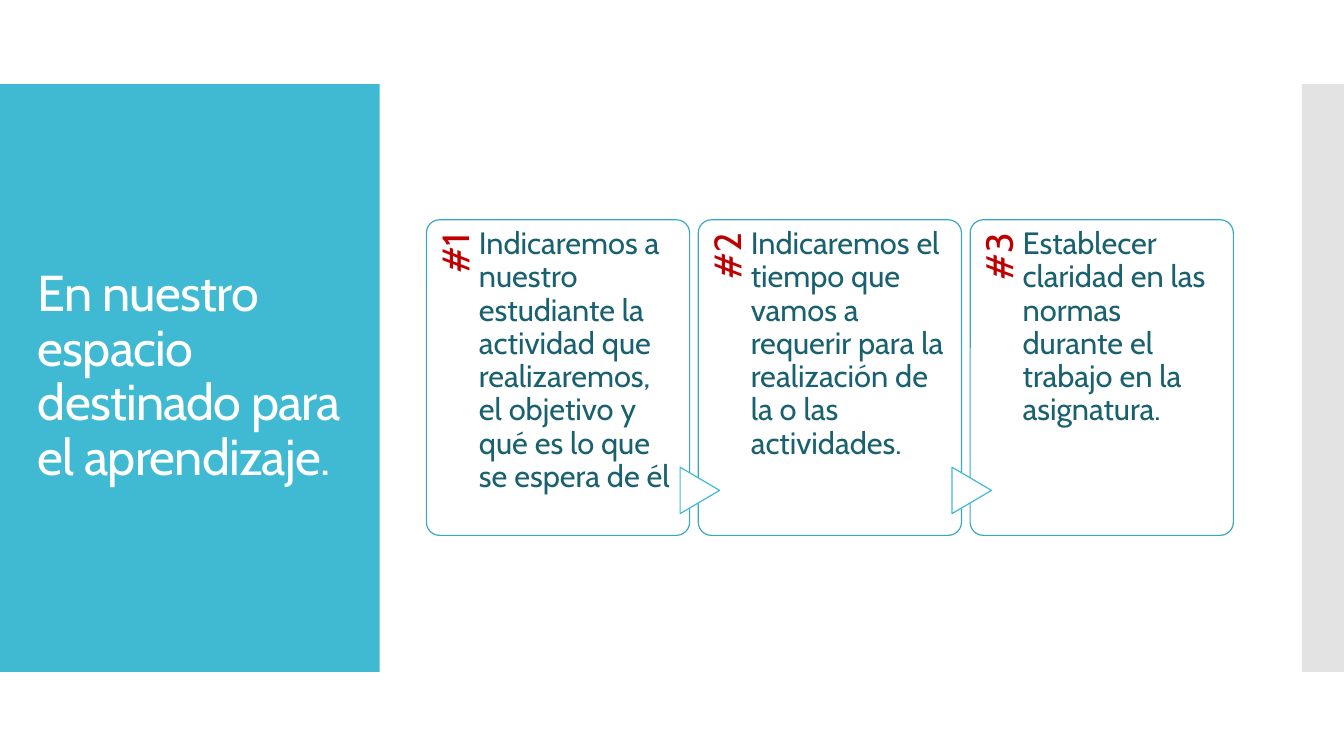
from pptx import Presentation
from pptx.dml.color import RGBColor
from pptx.enum.shapes import MSO_SHAPE
from pptx.enum.text import MSO_ANCHOR, PP_ALIGN
from pptx.oxml.ns import qn
from pptx.util import Pt
from lxml.etree import SubElement


def add_box(kind, left, top, width, height, fill, line=None):
    box = slide.shapes.add_shape(kind, Pt(left), Pt(top), Pt(width), Pt(height))
    box.shadow.inherit = False
    box.fill.solid()
    box.fill.fore_color.rgb = RGBColor.from_string(fill)
    if line:
        box.line.color.rgb = RGBColor.from_string(line)
        box.line.width = Pt(0.85)
    else:
        box.line.fill.background()
    return box


def add_text(text, left, top, width, height, size, color, frame, align=PP_ALIGN.LEFT):
    """Add a wrapped text box; frame holds the text frame's format values."""
    box = slide.shapes.add_textbox(Pt(left), Pt(top), Pt(width), Pt(height))
    for name, value in {"word_wrap": True, **frame}.items():
        setattr(box.text_frame, name, value)
    para = box.text_frame.paragraphs[0]
    para.alignment = align
    para.line_spacing = 0.9
    run = para.add_run()
    run.text = text
    font = {"name": "Cabin", "size": Pt(size)}
    for name, value in font.items():
        setattr(run.font, name, value)
    run.font.color.rgb = RGBColor.from_string(color)
    return box


deck = Presentation()
deck.slide_width, deck.slide_height = Pt(960), Pt(540)
slide = deck.slides.add_slide(deck.slide_layouts[6])

# Side panels and title
add_box(MSO_SHAPE.RECTANGLE, 0, 60, 271.2, 420, "40BAD2")
strip = add_box(MSO_SHAPE.RECTANGLE, 930, 60, 30, 420, "C8C8C8")
tint = strip.fill._xPr.find(qn("a:solidFill"))[0]
SubElement(tint, qn("a:alpha"), val="50000")

title = add_text("En nuestro espacio destinado para el aprendizaje.",
                 20, 88.5, 232, 362, 36, "FFFFFF",
                 {"vertical_anchor": MSO_ANCHOR.MIDDLE})
title.text_frame.paragraphs[0].runs[0]._r.get_or_add_rPr().set("spc", "-60")

# Numbered cards, joined by arrows
steps = [
    "Indicaremos a nuestro estudiante la actividad que realizaremos, "
    "el objetivo y qué es lo que se espera de él",
    "Indicaremos el tiempo que vamos a requerir para la realización "
    "de la o las actividades.",
    "Establecer claridad en las normas durante el trabajo en la asignatura.",
]
first, pitch, top, width, height = 304.6, 194.2, 157, 188, 225.4
tag_frame = {"margin_left": 0, "margin_top": Pt(7.2),
             "margin_right": Pt(9.5), "margin_bottom": 0}
body_frame = {"margin_left": 0, "margin_top": Pt(5.8),
              "margin_right": 0, "margin_bottom": 0}

for index, step in enumerate(steps):
    left = first + index * pitch
    card = add_box(MSO_SHAPE.ROUNDED_RECTANGLE, left, top, width, height,
                   "FFFFFF", "3AA9BF")
    card.adjustments[0] = 0.05
    tag = add_text(f"#{index + 1}", left - 73.5, 230.4, 184.4, 37.5, 27, "C00000",
                   tag_frame, PP_ALIGN.RIGHT)
    tag.rotation = 270
    if index:
        arrow = add_box(MSO_SHAPE.FLOWCHART_EXTRACT, left - 15.5, 336.2, 33.2, 28.2,
                        "FFFFFF", "40BAD2")
        arrow.rotation = 90
    add_text(step, left + 37.5, top, 140, height, 22, "1A616F", body_frame)

deck.save("out.pptx")
